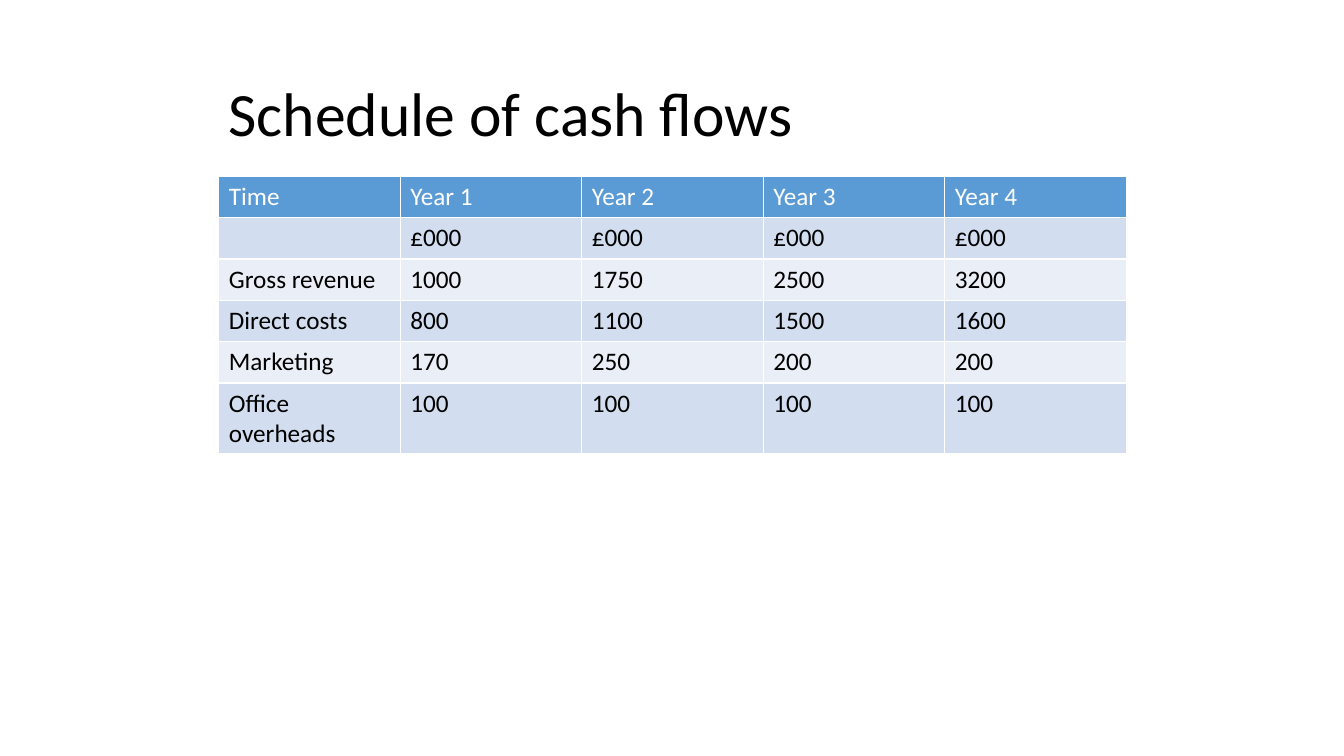
from dataclasses import dataclass

from lxml import etree
from pptx import Presentation
from pptx import util as u
from pptx.dml.color import RGBColor
from pptx.enum import text
from pptx.oxml import ns


@dataclass(frozen=True)
class Theme:
    """Colours, font and type sizes of the slide."""
    font: str = "Calibri"
    title_size: int = 44
    table_size: int = 18
    ink: str = "000000"
    white: str = "FFFFFF"
    header: str = "5B9BD5"
    bands: tuple = ("D2DEEF", "EAEFF7")
    border_width: int = 1


class SlideBuilder:
    """Adds styled elements to the current slide."""

    def __init__(self, slide, theme):
        self.slide = slide
        self.theme = theme

    def format_runs(self, paragraph, size, color):
        for run in paragraph.runs:
            run.font.name = self.theme.font
            run.font.size = u.Pt(size)
            run.font.bold = False
            run.font.color.rgb = RGBColor.from_string(color)

    def title(self, wording, left, top, width, height):
        shape = self.slide.shapes.add_textbox(
            u.Inches(left), u.Inches(top), u.Inches(width), u.Inches(height))
        frame = shape.text_frame
        frame.word_wrap = True
        frame.vertical_anchor = text.MSO_ANCHOR.MIDDLE
        frame.text = wording
        paragraph = frame.paragraphs[0]
        paragraph.line_spacing = 0.9
        self.format_runs(paragraph, self.theme.title_size, self.theme.ink)

    def border(self, cell):
        properties = cell._tc.get_or_add_tcPr()
        for side in ("lnL", "lnR", "lnT", "lnB"):
            line = etree.SubElement(properties, ns.qn(f"a:{side}"),
                                    w=str(u.Pt(self.theme.border_width)))
            fill = etree.SubElement(line, ns.qn("a:solidFill"))
            etree.SubElement(fill, ns.qn("a:srgbClr"), val=self.theme.white)

    def cell(self, cell, wording, fill, color):
        self.border(cell)
        cell.fill.solid()
        cell.fill.fore_color.rgb = RGBColor.from_string(fill)
        cell.text_frame.text = wording
        self.format_runs(cell.text_frame.paragraphs[0], self.theme.table_size, color)

    def table(self, rows, row_heights, left, top, width):
        table = self.slide.shapes.add_table(
            len(rows), len(rows[0]), u.Inches(left), u.Inches(top),
            u.Inches(width), u.Inches(sum(row_heights))).table
        for column in table.columns:
            column.width = u.Inches(width / len(rows[0]))
        for index, (values, height) in enumerate(zip(rows, row_heights)):
            table.rows[index].height = u.Inches(height)
            fill, color = self.theme.bands[(index - 1) % 2], self.theme.ink
            if index == 0:
                fill, color = self.theme.header, self.theme.white
            for position, value in enumerate(values):
                self.cell(table.cell(index, position), str(value), fill, color)


CASH_FLOWS = [
    ["Time"] + [f"Year {year}" for year in range(1, 5)],
    [""] + ["£000"] * 4,
    ["Gross revenue", 1000, 1750, 2500, 3200],
    ["Direct costs", 800, 1100, 1500, 1600],
    ["Marketing", 170, 250, 200, 200],
    ["Office overheads"] + [100] * 4,
]


def main():
    presentation = Presentation()
    presentation.slide_width = u.Inches(13.33)
    presentation.slide_height = u.Inches(7.5)
    slide = presentation.slides.add_slide(presentation.slide_layouts[6])
    builder = SlideBuilder(slide, Theme())
    builder.title("Schedule of cash flows", 2.17, 0.76, 9, 0.79)
    builder.table(CASH_FLOWS, [0.41] * 5 + [0.7], 2.17, 1.75, 9)
    presentation.save("out.pptx")


if __name__ == "__main__":
    main()
